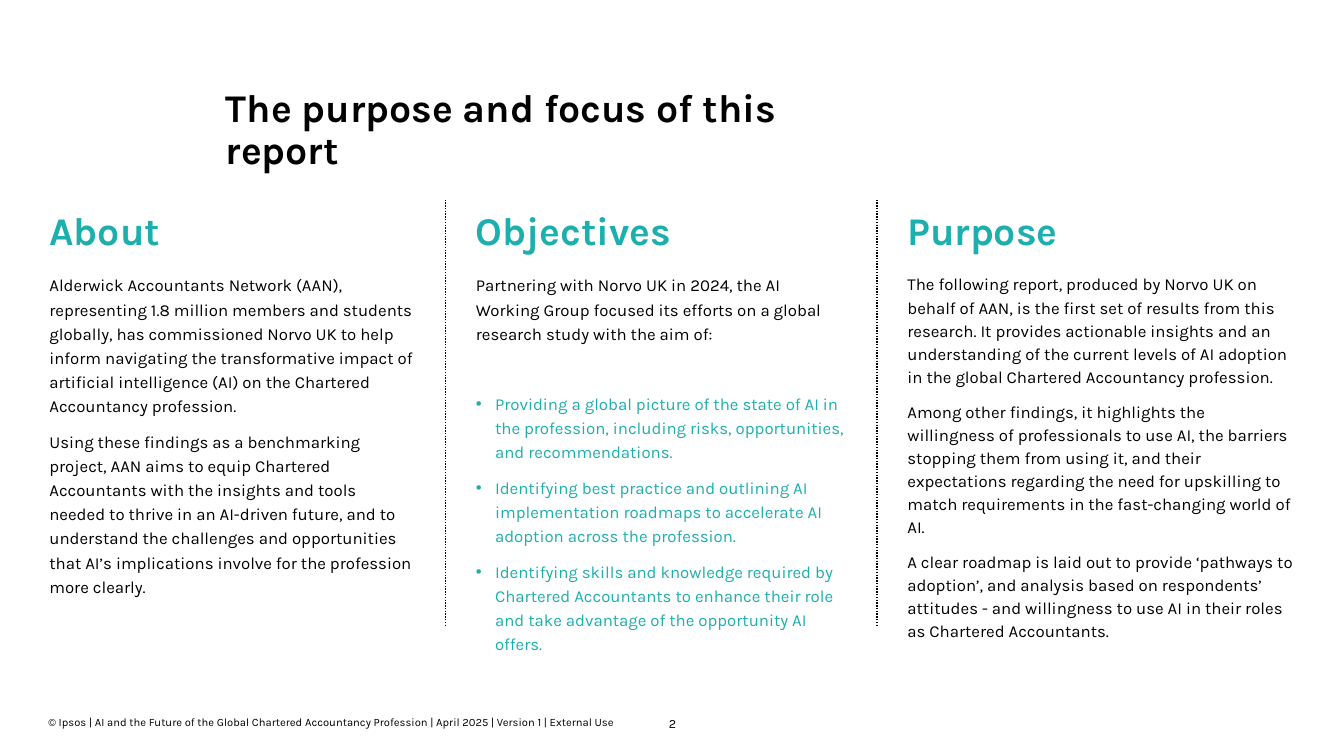
import dataclasses

import lxml.etree
import pptx
import pptx.dml.color
import pptx.enum.dml
import pptx.enum.shapes
import pptx.enum.text
import pptx.oxml.ns
import pptx.util

Inches = pptx.util.Inches
Pt = pptx.util.Pt
Align = pptx.enum.text.PP_ALIGN
qn = pptx.oxml.ns.qn


@dataclasses.dataclass(frozen=True)
class Theme:
    font: str = "Karla"
    black: str = "000000"
    teal: str = "1DAFAD"
    head: int = 28
    body: int = 12
    foot: int = 8
    page: int = 9
    gap: int = 4
    lead: int = 29


theme = Theme()
deck = pptx.Presentation()
deck.slide_width = Inches(13.33)
deck.slide_height = Inches(7.5)
slide = deck.slides.add_slide(deck.slide_layouts[6])


def add_text(box, lines, size, color=theme.black, bold=False, space=1.0, gap=theme.gap):
    """Add a text box with one paragraph per line and return its text frame."""
    frame = slide.shapes.add_textbox(*map(Inches, box)).text_frame
    frame.word_wrap = True
    frame.margin_left = frame.margin_right = 0
    frame.margin_top = frame.margin_bottom = 0
    frame.text = "\n".join(lines)
    for i, para in enumerate(frame.paragraphs):
        para.line_spacing = space
        para.space_before = Pt(gap if i else 0)
        para.space_after = Pt(gap)
        for run in para.runs:
            run.font.name = theme.font
            run.font.size = Pt(size)
            run.font.bold = bold
            run.font.color.rgb = pptx.dml.color.RGBColor.from_string(color)
    return frame


def add_bullet(para):
    props = para._p.get_or_add_pPr()
    props.set("marL", str(Inches(0.19)))
    props.set("indent", str(Inches(-0.19)))
    lxml.etree.SubElement(props, qn("a:buFont")).set("typeface", "Arial")
    lxml.etree.SubElement(props, qn("a:buChar")).set("char", "•")
    para.runs[0].font.color.rgb = pptx.dml.color.RGBColor.from_string(theme.teal)


# Title
add_text((2.24, 0.88, 6.5, 0.78), ["The purpose and focus of this report"],
         theme.head, bold=True, space=0.9, gap=0)

# Dotted dividers
for x in (4.42, 8.7):
    rule = slide.shapes.add_connector(
        pptx.enum.shapes.MSO_CONNECTOR.STRAIGHT,
        Inches(x), Inches(1.98), Inches(x), Inches(6.2))
    rule.line.color.rgb = pptx.dml.color.RGBColor.from_string(theme.black)
    rule.line.width = Pt(1)
    rule.line.dash_style = pptx.enum.dml.MSO_LINE.ROUND_DOT
    lxml.etree.SubElement(rule._element.spPr, qn("a:effectLst"))

# Columns: left, width, height, line spacing, heading, paragraphs, bullets
columns = [
    (0.49, 3.63, 2.89, 1.2, "About", [
        "Alderwick Accountants Network (AAN), representing 1.8 million members and "
        "students globally, has commissioned Norvo UK to help inform navigating the "
        "transformative impact of artificial intelligence (AI) on the Chartered "
        "Accountancy profession.",
        "Using these findings as a benchmarking project, AAN aims to equip Chartered "
        "Accountants with the insights and tools needed to thrive in an AI-driven "
        "future, and to understand the challenges and opportunities that AI’s "
        "implications involve for the profession more clearly.",
    ], []),
    (4.72, 3.68, 1.99, 1.2, "Objectives", [
        "Partnering with Norvo UK in 2024, the AI Working Group focused its efforts "
        "on a global research study with the aim of:",
    ], [
        "Providing a global picture of the state of AI in the profession, including "
        "risks, opportunities, and recommendations.",
        "Identifying best practice and outlining AI implementation roadmaps to "
        "accelerate AI adoption across the profession.",
        "Identifying skills and knowledge required by Chartered Accountants to enhance "
        "their role and take advantage of the opportunity AI offers.",
    ]),
    (9, 3.84, 4.21, 1.15, "Purpose", [
        "The following report, produced by Norvo UK on behalf of AAN, is the first set "
        "of results from this research. It provides actionable insights and an "
        "understanding of the current levels of AI adoption in the global Chartered "
        "Accountancy profession.",
        "Among other findings, it highlights the willingness of professionals to use "
        "AI, the barriers stopping them from using it, and their expectations "
        "regarding the need for upskilling to match requirements in the fast-changing "
        "world of AI.",
        "A clear roadmap is laid out to provide ‘pathways to adoption’, and analysis "
        "based on respondents’ attitudes - and willingness to use AI in their roles as "
        "Chartered Accountants.",
    ], []),
]
for left, width, height, space, name, paras, points in columns:
    add_text((left, 2, width, 0.47), [name], theme.head, theme.teal, True, 1.1)
    frame = add_text((left, 2.69, width, height), paras + points, theme.body, space=space)
    items = frame.paragraphs[len(paras):]
    for item in items:
        add_bullet(item)
    if items:
        items[0].space_before = Pt(theme.lead)

# Footer
foot = add_text(
    (0.48, 7.1, 5.77, 0.13),
    ["© Ipsos | AI and the Future of the Global Chartered Accountancy Profession | "
     "April 2025 | Version 1 | External Use"],
    theme.foot, gap=0)
foot.vertical_anchor = pptx.enum.text.MSO_ANCHOR.BOTTOM
page = add_text((6.4, 7.09, 0.54, 0.15), ["2"], theme.page, space=1.1)
page.paragraphs[0].alignment = Align.CENTER

deck.save("out.pptx")
